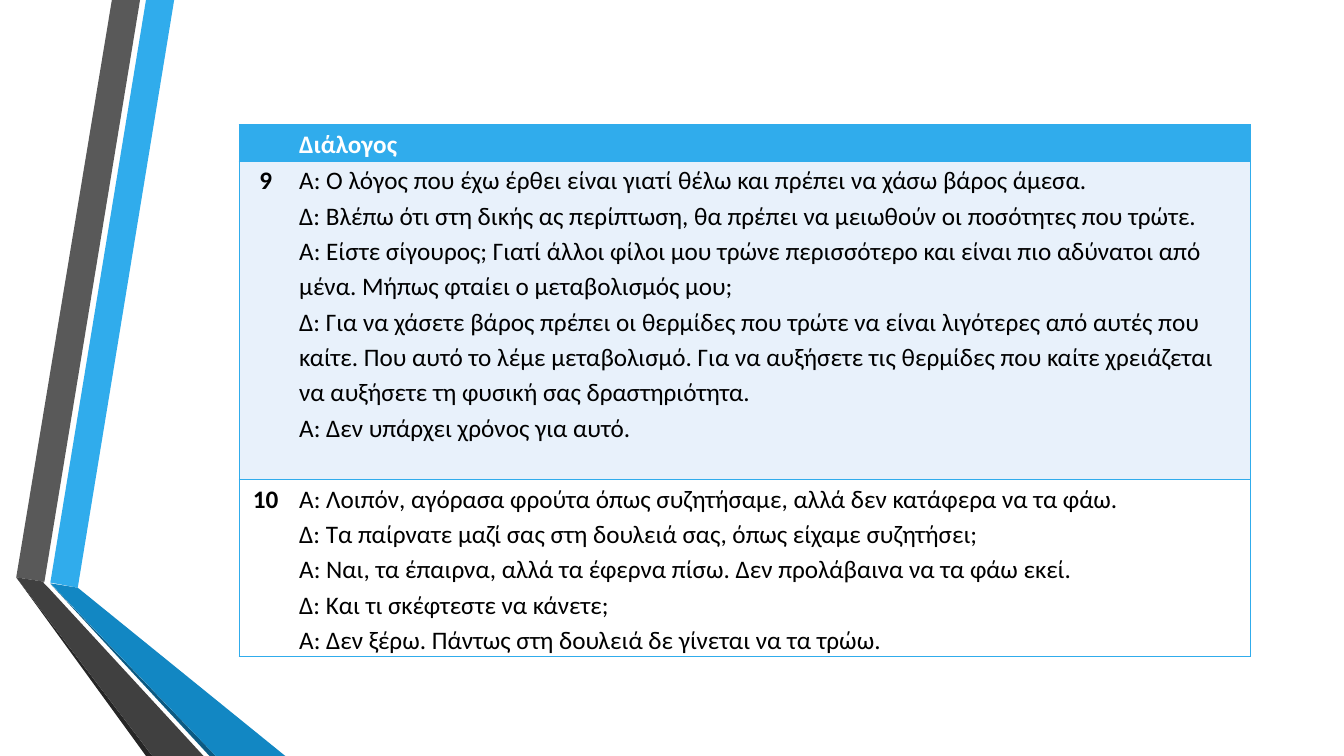
from lxml import etree
from pptx import Presentation
from pptx import util as u
from pptx.dml import color
from pptx.enum import text
from pptx.oxml import ns

BLUE = "30ACEC"
FONT = "Calibri"

# Ribbon outlines in hundredths of a centimetre, from back to front
RIBBONS = [
    (BLUE, [(127, 1468), (196, 1481), (439, 0), (368, 0)]),
    ("595959", [(353, 0), (282, 0), (41, 1455), (112, 1466)]),
    ("262626", [(41, 1455), (368, 1905), (384, 1905)]),
    ("0C5A82", [(127, 1471), (528, 1905), (544, 1905)]),
    ("1287C3", [(127, 1470), (544, 1905), (719, 1905), (196, 1481)]),
    ("404040", [(513, 1905), (122, 1481), (109, 1468), (112, 1466),
                (41, 1455), (384, 1905)]),
]

# Number, spoken lines, row fill, row height in centimetres
DIALOGUES = [
    ("", ["Διάλογος"], BLUE, 0.91),
    ("9", [
        "Α: Ο λόγος που έχω έρθει είναι γιατί θέλω και πρέπει να χάσω βάρος άμεσα.",
        "Δ: Βλέπω ότι στη δικής ας περίπτωση, θα πρέπει να μειωθούν οι ποσότητες που τρώτε.",
        "Α: Είστε σίγουρος; Γιατί άλλοι φίλοι μου τρώνε περισσότερο και είναι πιο αδύνατοι "
        "από μένα. Μήπως φταίει ο μεταβολισμός μου;",
        "Δ: Για να χάσετε βάρος πρέπει οι θερμίδες που τρώτε να είναι λιγότερες από αυτές "
        "που καίτε. Που αυτό το λέμε μεταβολισμό. Για να αυξήσετε τις θερμίδες που καίτε "
        "χρειάζεται να αυξήσετε τη φυσική σας δραστηριότητα.",
        "Α: Δεν υπάρχει χρόνος για αυτό.",
    ], "E8F1FB", 8.02),
    ("10", [
        "Α: Λοιπόν, αγόρασα φρούτα όπως συζητήσαμε, αλλά δεν κατάφερα να τα φάω.",
        "Δ: Τα παίρνατε μαζί σας στη δουλειά σας, όπως είχαμε συζητήσει;",
        "Α: Ναι, τα έπαιρνα, αλλά τα έφερνα πίσω. Δεν προλάβαινα να τα φάω εκεί.",
        "Δ: Και τι σκέφτεστε να κάνετε;",
        "Α: Δεν ξέρω. Πάντως στη δουλειά δε γίνεται να τα τρώω.",
    ], "FFFFFF", 4.47),
]


def paint(fill, value):
    fill.solid()
    fill.fore_color.rgb = color.RGBColor.from_string(value)


def set_borders(cell, open_side):
    """Draw blue lines on every side but the one between the columns."""
    properties = cell._tc.get_or_add_tcPr()
    for side in ("lnL", "lnR", "lnT", "lnB"):
        line = etree.SubElement(properties, ns.qn(f"a:{side}"), w=str(u.Pt(1)))
        if side == open_side:
            etree.SubElement(line, ns.qn("a:noFill"))
        else:
            solid = etree.SubElement(line, ns.qn("a:solidFill"))
            etree.SubElement(solid, ns.qn("a:srgbClr"), val=BLUE)


def fill_cell(cell, lines, background, ink, bold, alignment):
    cell.margin_left = cell.margin_right = u.Cm(0.18)
    cell.margin_top = cell.margin_bottom = 0
    cell.text_frame.text = "\n".join(lines)
    for paragraph in cell.text_frame.paragraphs:
        paragraph.line_spacing = 1.15
        paragraph.alignment = alignment
        paragraph.font.size = u.Pt(18)
        for run in paragraph.runs:
            run.font.name = FONT
            run.font.size = u.Pt(18)
            run.font.bold = bold
            paint(run.font.fill, ink)
    paint(cell.fill, background)


def add_ribbons(slide, left, top):
    for fill, points in RIBBONS:
        builder = slide.shapes.build_freeform(*points[0], scale=u.Cm(0.01))
        builder.add_line_segments(points[1:], close=True)
        ribbon = builder.convert_to_shape(left, top)
        ribbon.shadow.inherit = False
        paint(ribbon.fill, fill)
        ribbon.line.fill.background()


def add_dialogue_table(slide, left, top, width, height):
    frame = slide.shapes.add_table(len(DIALOGUES), 2, left, top, width, height)
    table = frame.table
    table.horz_banding = False
    number_width = u.Cm(1.33)
    table.columns[0].width = number_width
    table.columns[1].width = width - number_width
    for index, (number, lines, background, row_height) in enumerate(DIALOGUES):
        table.rows[index].height = u.Cm(row_height)
        is_header = index == 0
        ink = "FFFFFF" if is_header else "000000"
        number_cell, speech_cell = table.cell(index, 0), table.cell(index, 1)
        set_borders(number_cell, "lnR")
        set_borders(speech_cell, "lnL")
        fill_cell(number_cell, [number], background, ink, True, text.PP_ALIGN.CENTER)
        fill_cell(speech_cell, lines, background, ink, is_header, text.PP_ALIGN.LEFT)


def main():
    presentation = Presentation()
    presentation.slide_width = u.Cm(33.87)
    presentation.slide_height = u.Cm(19.05)
    slide = presentation.slides.add_slide(presentation.slide_layouts[6])

    # Folded ribbons along the left edge
    add_ribbons(slide, 0, 0)
    # Numbered dialogues
    table_height = u.Cm(sum(row[3] for row in DIALOGUES))
    add_dialogue_table(slide, u.Cm(6.03), u.Cm(3.15), u.Cm(25.48), table_height)

    presentation.save("out.pptx")


if __name__ == "__main__":
    main()
